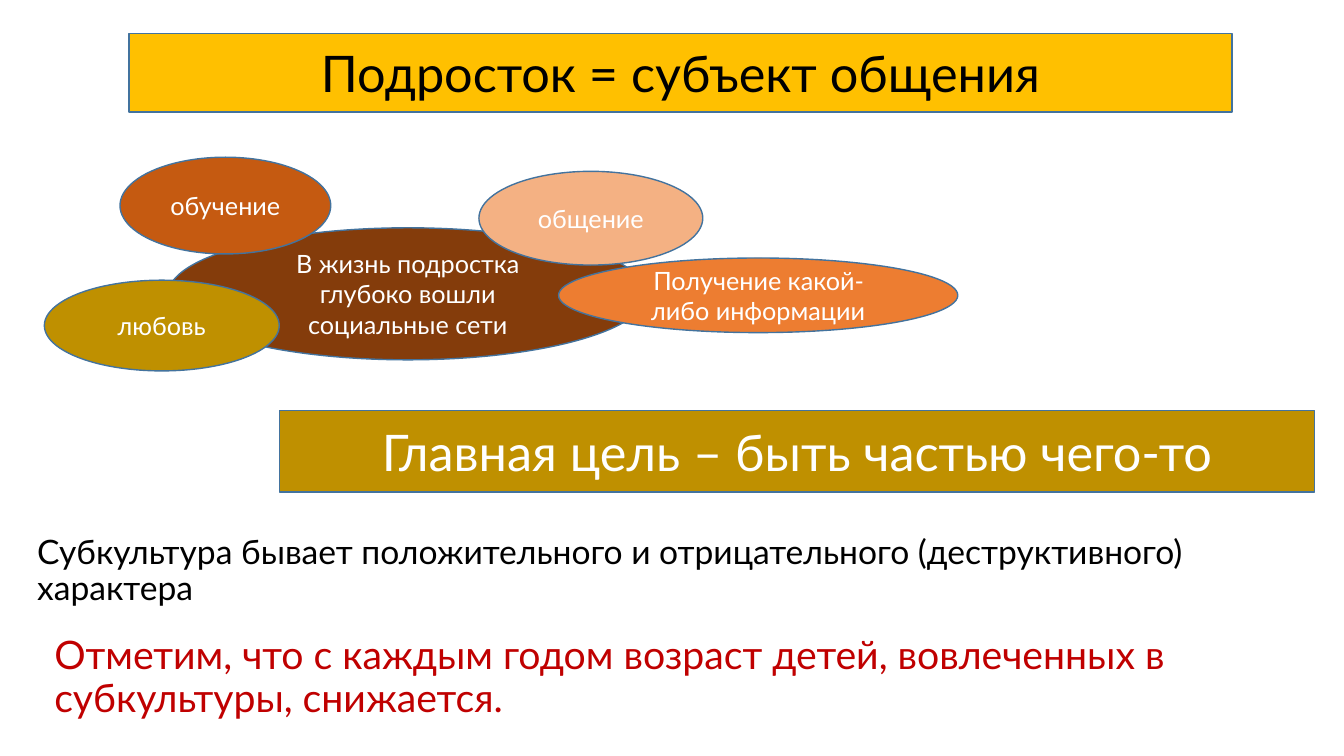
from dataclasses import dataclass

from pptx import Presentation
from pptx.dml.color import RGBColor
from pptx.enum.shapes import MSO_SHAPE as Shape
from pptx.enum.text import MSO_ANCHOR as Anchor, PP_ALIGN as Align
from pptx.util import Inches, Pt


@dataclass(frozen=True)
class Theme:
    font: str = "Lato"
    black: str = "000000"
    white: str = "FFFFFF"
    red: str = "C00000"
    outline: str = "43739E"
    amber: str = "FFC000"
    gold: str = "BF9000"
    brown: str = "843C0B"
    rust: str = "C55A11"
    orange: str = "ED7D31"
    peach: str = "F4B183"
    banner_size: int = 36
    remark_size: int = 28
    statement_size: int = 24
    bubble_size: int = 18


class SlideBuilder:
    """Draws banners, bubbles and statements on one slide in a shared style."""

    def __init__(self, slide, theme):
        self.slide = slide
        self.theme = theme

    def set_text(self, frame, text, size, color, frame_format, paragraph_format):
        paragraph = frame.paragraphs[0]
        run = paragraph.add_run()
        run.text = text
        font_format = {"name": self.theme.font, "size": Pt(size)}
        for target, values in (
            (frame, {"word_wrap": True, **frame_format}),
            (paragraph, paragraph_format),
            (run.font, font_format),
        ):
            for attribute, value in values.items():
                setattr(target, attribute, value)
        run.font.color.rgb = RGBColor.from_string(color)

    def figure(self, kind, box, text, size, fill, color):
        figure = self.slide.shapes.add_shape(kind, *map(Inches, box))
        figure.shadow.inherit = False
        figure.fill.solid()
        figure.fill.fore_color.rgb = RGBColor.from_string(fill)
        figure.line.color.rgb = RGBColor.from_string(self.theme.outline)
        figure.line.width = Pt(1)
        self.set_text(figure.text_frame, text, size, color,
                      {"vertical_anchor": Anchor.MIDDLE}, {"alignment": Align.CENTER})

    def banner(self, box, text, fill, color):
        self.figure(Shape.RECTANGLE, box, text, self.theme.banner_size, fill, color)

    def bubble(self, box, text, fill):
        self.figure(Shape.OVAL, box, text, self.theme.bubble_size, fill, self.theme.white)

    def statement(self, box, text, size, color, anchor):
        statement = self.slide.shapes.add_textbox(*map(Inches, box))
        self.set_text(statement.text_frame, text, size, color,
                      {"vertical_anchor": anchor}, {"line_spacing": 0.9})


def main():
    theme = Theme()
    deck = Presentation()
    deck.slide_width, deck.slide_height = Inches(13.33), Inches(7.5)
    builder = SlideBuilder(deck.slides.add_slide(deck.slide_layouts[6]), theme)

    builder.statement(
        (0.44, 6.26, 11.94, 0.97),
        "Отметим, что с каждым годом возраст детей, вовлеченных в субкультуры, снижается.",
        theme.remark_size, theme.red, Anchor.TOP)
    builder.banner((1.28, 0.33, 10.94, 0.78), "Подросток = субъект общения",
                   theme.amber, theme.black)

    social_networks = (
        ((1.67, 2.26, 4.75, 1.31), "В жизнь подростка глубоко вошли социальные сети", theme.brown),
        ((4.75, 1.7, 2.22, 0.93), "общение", theme.peach),
        ((5.54, 2.56, 3.96, 0.74), "Получение какой-либо информации", theme.orange),
        ((1.19, 1.56, 2.09, 0.96), "обучение", theme.rust),
        ((0.44, 2.78, 2.33, 0.9), "любовь", theme.gold),
    )
    for box, text, fill in social_networks:
        builder.bubble(box, text, fill)

    builder.banner((2.77, 4.07, 10.27, 0.81), "Главная цель – быть частью чего-то",
                   theme.gold, theme.white)
    builder.statement(
        (0.27, 5.19, 12.61, 0.96),
        "Субкультура бывает положительного и отрицательного (деструктивного) характера",
        theme.statement_size, theme.black, Anchor.MIDDLE)

    deck.save("out.pptx")


if __name__ == "__main__":
    main()
